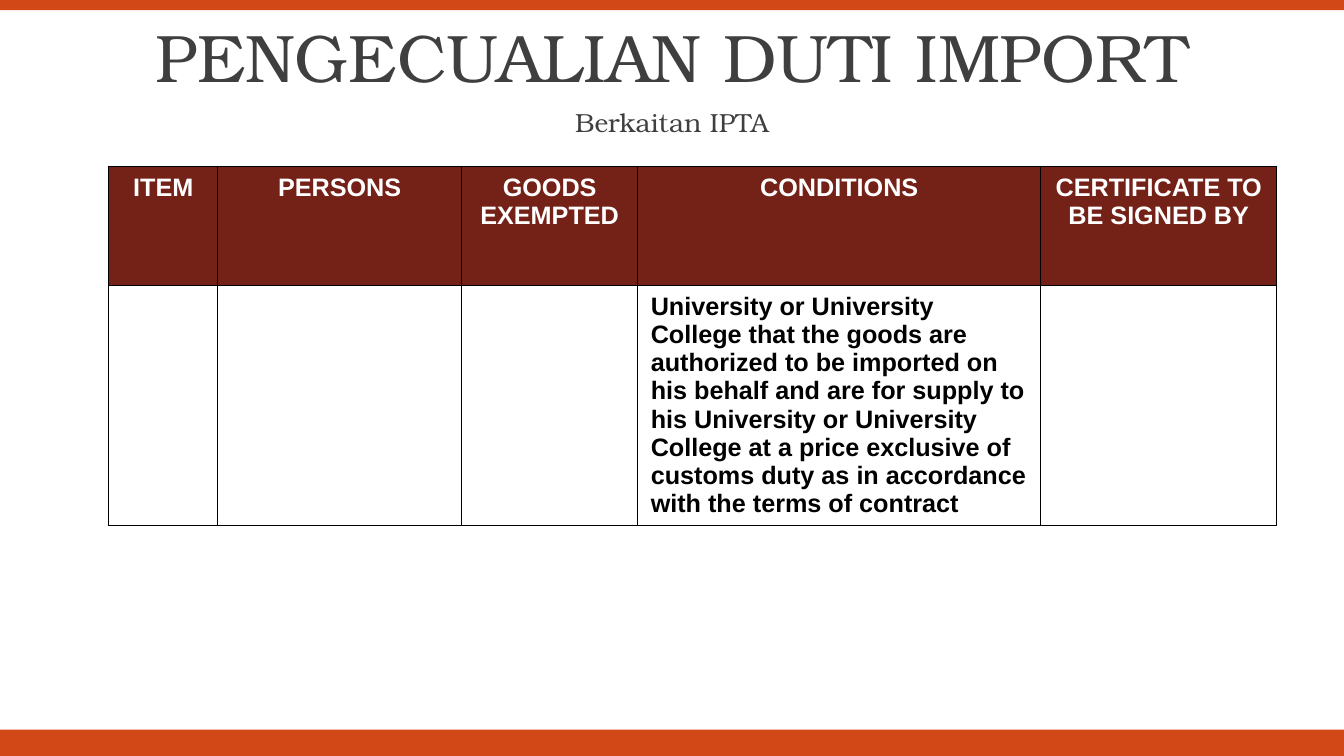
"""Build the import duty exemption slide with its conditions table."""
from lxml import etree
from pptx import Presentation
from pptx import util as u
from pptx.dml.color import RGBColor
from pptx.enum import shapes, text
from pptx.oxml import ns

COLOURS = {"bar": "D34817", "heading": "3F3F3F", "header": "742117",
           "white": "FFFFFF", "black": "000000"}
HEADERS = ["ITEM", "PERSONS", "GOODS EXEMPTED", "CONDITIONS",
           "CERTIFICATE TO BE SIGNED BY"]
CONDITION = ("University or University College that the goods are authorized "
             "to be imported on his behalf and are for supply to his University "
             "or University College at a price exclusive of customs duty as in "
             "accordance with the terms of contract")


def colour(name):
    return RGBColor.from_string(COLOURS[name])


def write(frame, content, font="Arial", size=18, ink="black", bold=False,
          align=text.PP_ALIGN.LEFT, spacing=1.0):
    para = frame.paragraphs[0]
    para.alignment = align
    para.line_spacing = spacing
    para.space_before = u.Pt(0)
    span = para.add_run()
    span.text = content
    span.font.name = font
    span.font.size = u.Pt(size)
    span.font.bold = bold
    span.font.color.rgb = colour(ink)


class DutySlide:
    heading_font = "TeX Gyre Bonum"

    def __init__(self, deck):
        self.deck = deck
        self.page = deck.slides.add_slide(deck.slide_layouts[0])

    def across(self, percent):
        return round(self.deck.slide_width * percent / 100)

    def down(self, percent):
        return round(self.deck.slide_height * percent / 100)

    def bar(self, top, height):
        box = self.page.shapes.add_shape(
            shapes.MSO_SHAPE.RECTANGLE, 0, self.down(top),
            self.across(100), self.down(height))
        box.shadow.inherit = False
        box.fill.solid()
        box.fill.fore_color.rgb = colour("bar")
        box.line.fill.background()

    def heading(self, index, content, top, height, size):
        box = self.page.placeholders[index]
        box.left, box.top = 0, self.down(top)
        box.width, box.height = self.across(100), self.down(height)
        frame = box.text_frame
        frame.word_wrap = True
        frame.auto_size = text.MSO_AUTO_SIZE.NONE
        frame.vertical_anchor = text.MSO_ANCHOR.MIDDLE
        write(frame, content, font=self.heading_font, size=size, ink="heading",
              align=text.PP_ALIGN.CENTER, spacing=0.9)

    def cell(self, cell, content, fill, **style):
        properties = cell._tc.get_or_add_tcPr()
        for side in ("a:lnL", "a:lnR", "a:lnT", "a:lnB"):
            line = etree.SubElement(properties, ns.qn(side), w=str(u.Pt(1)))
            solid = etree.SubElement(line, ns.qn("a:solidFill"))
            etree.SubElement(solid, ns.qn("a:srgbClr"), val=COLOURS["black"])
        cell.fill.solid()
        cell.fill.fore_color.rgb = colour(fill)
        cell.margin_left = cell.margin_right = u.Inches(0.13)
        cell.margin_top = cell.margin_bottom = u.Inches(0.07)
        if content:
            write(cell.text_frame, content, bold=True, **style)

    def table(self, left, top, widths, heights, headers, values):
        grid = self.page.shapes.add_table(
            len(heights), len(widths), self.across(left), self.down(top),
            self.across(sum(widths)), self.down(sum(heights))).table
        grid.first_row = grid.horz_banding = False
        for row, height in zip(grid.rows, heights):
            row.height = self.down(height)
        for index, width in enumerate(widths):
            grid.columns[index].width = self.across(width)
            self.cell(grid.cell(0, index), headers[index], "header",
                      ink="white", align=text.PP_ALIGN.CENTER)
            self.cell(grid.cell(1, index), values[index], "white")


def main():
    deck = Presentation()
    deck.slide_width, deck.slide_height = u.Inches(13.33), u.Inches(7.5)
    slide = DutySlide(deck)
    slide.bar(96.5, 3.5)
    slide.bar(0, 1.35)
    slide.heading(0, "PENGECUALIAN DUTI IMPORT", 2.4, 11.2, 48)
    slide.heading(1, "Berkaitan IPTA", 13.6, 5.6, 18.7)
    slide.table(8.1, 22, [8.1, 18.15, 13.1, 30, 17.55], [15.75, 31.6],
                HEADERS, ["", "", "", CONDITION, ""])
    deck.save("out.pptx")


if __name__ == "__main__":
    main()
